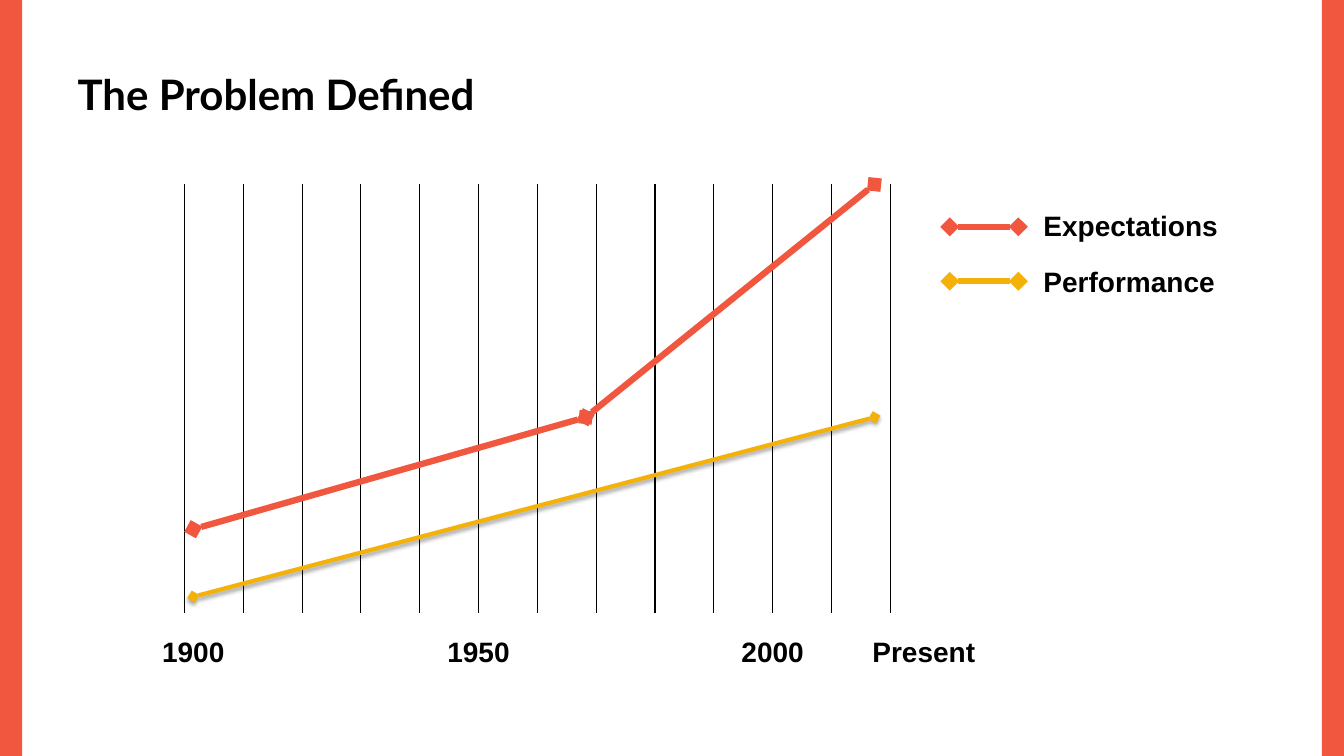
from dataclasses import dataclass

from lxml import etree
from pptx import Presentation, util as u
from pptx.dml.color import RGBColor
from pptx.enum import shapes, text
from pptx.oxml.ns import qn


@dataclass(frozen=True)
class Theme:
    accent: str = "F1563F"
    gold: str = "F3B10A"
    ink: str = "000000"
    title_font: str = "Lato"
    body_font: str = "Arial"
    title_size: int = 30
    label_size: int = 20


T = Theme()
WIDTH, HEIGHT = 13.33, 7.5
DECADES = 12

# Series points: (decades along the axis, inches above the base)
EXPECTATIONS = [(0.15, 0.83), (6.82, 1.94), (11.73, 4.25)]
PERFORMANCE = [(0.15, 0.16), (11.73, 1.94)]

# Year labels: (text, centre in decades, box width)
YEARS = [("1900", 0.15, 0.83), ("1950", 5, 0.83),
         ("2000", 10, 0.83), ("Present", 12.57, 1.33)]


def write(tf, words, size=T.label_size, font=T.body_font, color=T.ink,
          align=text.PP_ALIGN.LEFT, anchor=text.MSO_ANCHOR.TOP):
    tf.word_wrap = True
    tf.vertical_anchor = anchor
    p = tf.paragraphs[0]
    p.alignment = align
    r = p.add_run()
    r.text = words
    r.font.name, r.font.size, r.font.bold = font, u.Pt(size), True
    r.font.color.rgb = RGBColor.from_string(color)


def label(s, words, x, y, w, h, **fmt):
    tf = s.shapes.add_textbox(*map(u.Inches, (x, y, w, h))).text_frame
    if fmt.get("align") == text.PP_ALIGN.CENTER:
        tf.margin_left = tf.margin_right = 0
    write(tf, words, **fmt)


def line(s, start, end, color=T.ink, width=0.75, diamonds=False, shadow=False):
    sp = s.shapes.add_connector(shapes.MSO_CONNECTOR.STRAIGHT,
                                *map(u.Inches, (*start, *end)))
    sp.line.color.rgb = RGBColor.from_string(color)
    sp.line.width = u.Pt(width)
    if diamonds:
        ln = sp.line._get_or_add_ln()
        for tag in ("a:headEnd", "a:tailEnd"):
            etree.SubElement(ln, qn(tag), type="diamond")
    effects = etree.SubElement(sp._element.spPr, qn("a:effectLst"))
    if shadow:
        cast = etree.SubElement(effects, qn("a:outerShdw"),
                                blurRad=str(u.Pt(3.1)), dist=str(u.Pt(1.8)),
                                dir="5400000", rotWithShape="0")
        clr = etree.SubElement(cast, qn("a:srgbClr"), val=T.ink)
        etree.SubElement(clr, qn("a:alpha"), val="35000")


def side_bars(s, w):
    for x in (0, WIDTH - w):
        sp = s.shapes.add_shape(shapes.MSO_SHAPE.RECTANGLE,
                                *map(u.Inches, (x, 0, w, HEIGHT)))
        sp.shadow.inherit = False
        sp.fill.solid()
        sp.fill.fore_color.rgb = RGBColor.from_string(T.accent)
        sp.line.fill.background()


def title(s, words, x, y, w, h):
    sp = s.shapes.title
    sp.left, sp.top, sp.width, sp.height = map(u.Inches, (x, y, w, h))
    write(sp.text_frame, words, size=T.title_size, font=T.title_font,
          anchor=text.MSO_ANCHOR.MIDDLE)


def timeline(s, x, y, w, h):
    step, base = w / DECADES, y + h

    # One grid line per decade
    for i in range(DECADES + 1):
        line(s, (x + i * step, y), (x + i * step, base))

    # Series
    for points, fmt in ((PERFORMANCE, dict(color=T.gold, width=3, shadow=True)),
                        (EXPECTATIONS, dict(color=T.accent, width=4.5))):
        places = [(x + d * step, base - rise) for d, rise in points]
        for start, end in zip(places, places[1:]):
            line(s, start, end, diamonds=True, **fmt)

    # Years
    for words, decade, box_w in YEARS:
        label(s, words, x + decade * step - box_w / 2, base + 0.17, box_w, 0.43,
              align=text.PP_ALIGN.CENTER)


def legend(s, x, y, w, row):
    key_w, gap = 0.68, 0.15
    for i, (words, color) in enumerate((("Expectations", T.accent),
                                        ("Performance", T.gold))):
        key_y = y + 0.23 + i * 0.54
        line(s, (x, key_y), (x + key_w, key_y), color, 4.5, diamonds=True)
        label(s, words, x + key_w + gap, y + i * row, w - key_w - gap, 0.44)


def main():
    prs = Presentation()
    prs.slide_width, prs.slide_height = u.Inches(WIDTH), u.Inches(HEIGHT)
    s = prs.slides.add_slide(prs.slide_layouts[5])
    side_bars(s, 0.22)
    title(s, "The Problem Defined", 0.67, 0.3, 12, 1.25)
    timeline(s, 1.83, 1.83, 7, 4.25)
    legend(s, 9.42, 2.02, 3.58, 0.56)
    prs.save("out.pptx")


if __name__ == "__main__":
    main()
